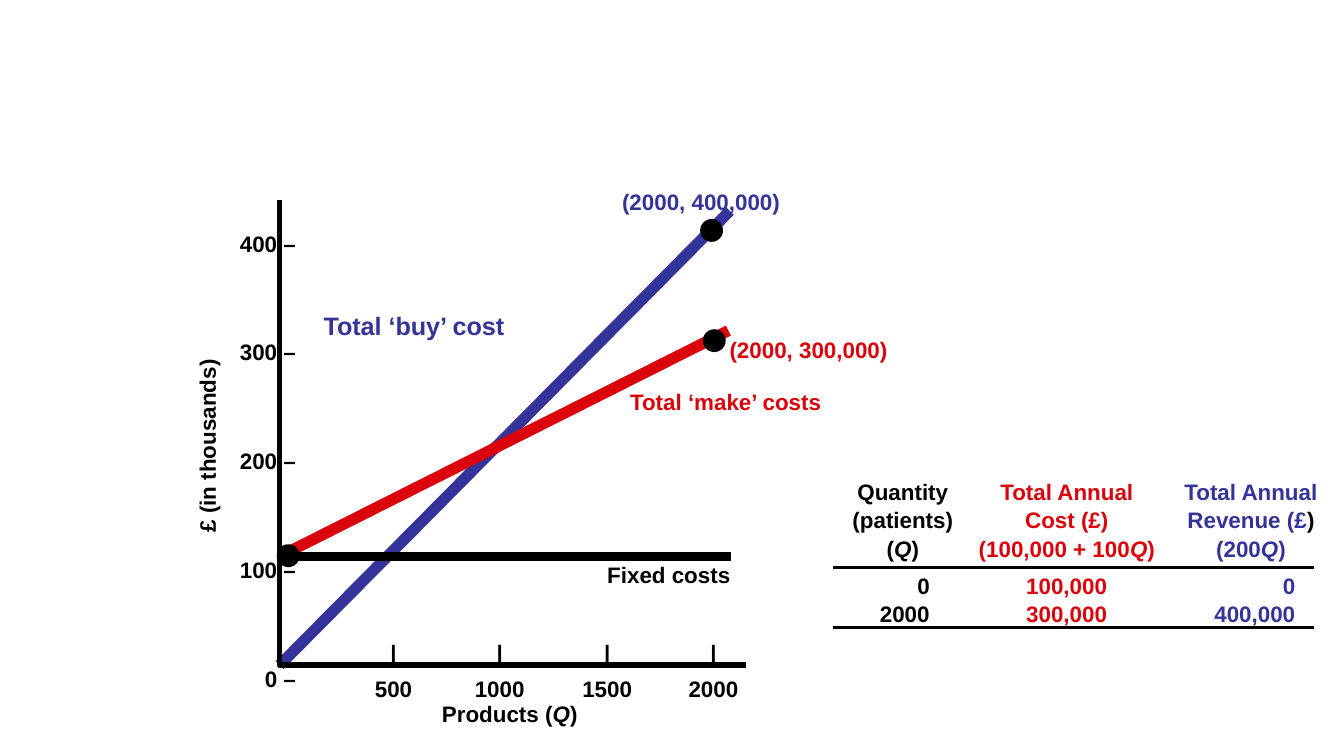
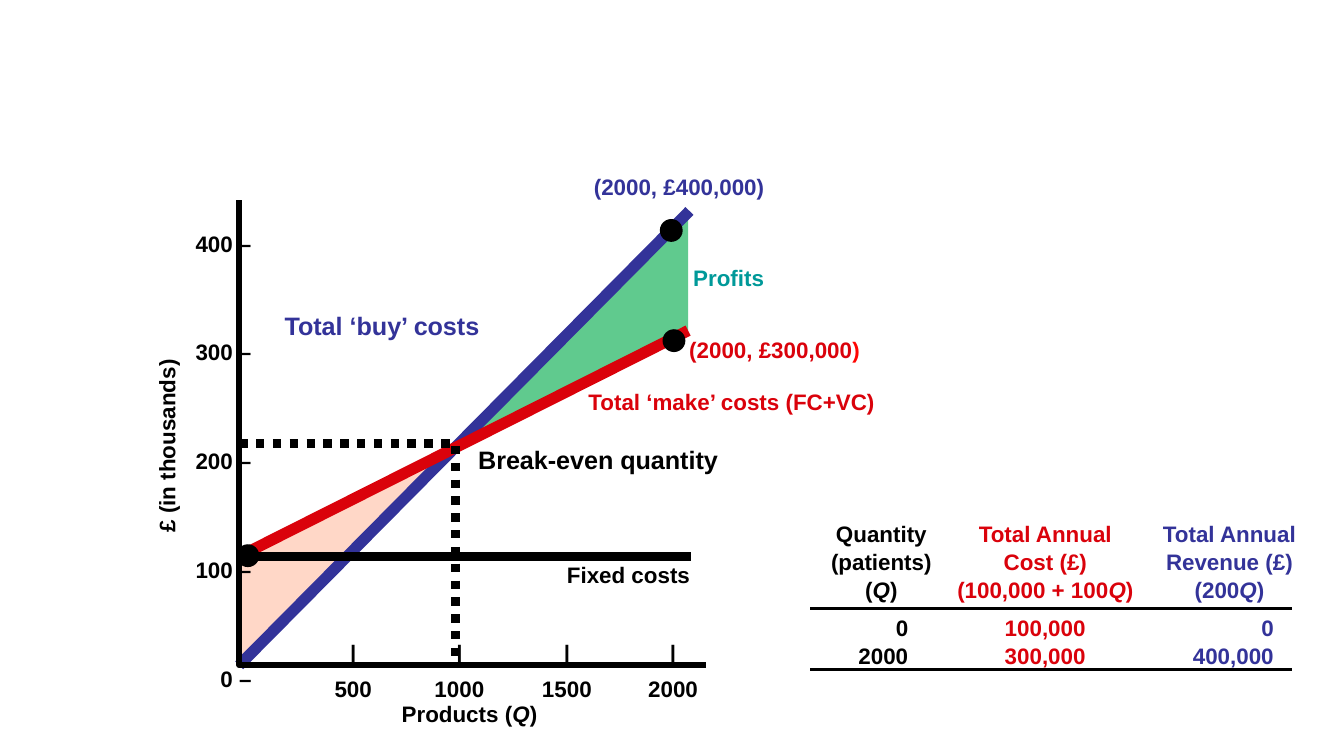
import pptx
import pptx.dml.color
import pptx.enum.dml
import pptx.enum.shapes
import pptx.enum.text
import pptx.oxml
import pptx.oxml.ns
import pptx.util
from pptx.util import Inches

FONT = "Arial"
BLACK, BLUE, RED = "000000", "333399", "DA020B"
PEACH, GREEN, TEAL, BRIGHT_RED = "FFD7C7", "60CA8E", "009999", "FF0502"
LARGE = 13.5
TICK_STOPS = [0.29, 1.08, 1.88, 2.67]
HEAD_STOPS = [0.51, 1.73, 3.1]
VALUE_STOPS = [0.51, 1.83, 3.23]


def paint(fill, color):
    """Set a solid colour, given as a hex string, on a fill."""
    fill.solid()
    fill.fore_color.rgb = pptx.dml.color.RGBColor.from_string(color)


def set_tabs(para, stops, kind):
    """Give a paragraph tab stops of one kind."""
    tabs = "".join(f'<a:tab pos="{Inches(stop)}" algn="{kind}"/>' for stop in stops)
    para._p.get_or_add_pPr().append(pptx.oxml.parse_xml(
        f'<a:tabLst {pptx.oxml.ns.nsdecls("a")}>{tabs}</a:tabLst>'))


def write(para, text, color=BLACK, size=12):
    """Write text, or (text, colour) pieces, with *stars* around italics."""
    pieces = [(text, color)] if isinstance(text, str) else text
    for words, tone in pieces:
        for index, part in enumerate(words.split("*")):
            if part:
                span = para.add_run()
                span.text = part
                span.font.name = FONT
                span.font.size = pptx.util.Pt(size)
                span.font.bold = True
                span.font.italic = index % 2 == 1
                paint(span.font.fill, tone)


def add_text(page, lines, left, top, width, height=0.3, rotation=0, wrap=False,
             spacing=None, gap=0, align=None, stops=(), kind="ctr", **style):
    """Add a text box with one paragraph for each line."""
    box = page.shapes.add_textbox(*map(Inches, (left, top, width, height)))
    box.rotation = rotation
    frame = box.text_frame
    frame.word_wrap = wrap
    frame.auto_size = pptx.enum.text.MSO_AUTO_SIZE.SHAPE_TO_FIT_TEXT
    for index, line in enumerate([lines] if isinstance(lines, str) else lines):
        para = frame.add_paragraph() if index else frame.paragraphs[0]
        para.alignment = align
        para.line_spacing = spacing
        para.space_before = pptx.util.Pt(gap if index else 0)
        if stops:
            set_tabs(para, stops, kind)
        write(para, line, **style)


def add_line(page, start, end, color, weight):
    """Add a straight line without shadow."""
    line = page.shapes.add_connector(
        pptx.enum.shapes.MSO_CONNECTOR.STRAIGHT, *map(Inches, (*start, *end)))
    paint(line.line.fill, color)
    line.line.width = pptx.util.Pt(weight)
    line._element.spPr.append(pptx.oxml.parse_xml(
        f'<a:effectLst {pptx.oxml.ns.nsdecls("a")}/>'))


def add_outline(page, points, fill=None, weight=None, dash=None):
    """Add a filled area, or an open black path when no fill is given."""
    first, *others = [tuple(map(Inches, point)) for point in points]
    builder = page.shapes.build_freeform(*first)
    builder.add_line_segments(others, close=fill is not None)
    shape = builder.convert_to_shape()
    shape.shadow.inherit = False
    if fill:
        paint(shape.fill, fill)
        shape.line.fill.background()
    else:
        shape.fill.background()
        paint(shape.line.fill, BLACK)
        shape.line.width = pptx.util.Pt(weight)
        shape.line.dash_style = dash


def add_dot(page, left, top):
    """Add a black point marker."""
    dot = page.shapes.add_shape(
        pptx.enum.shapes.MSO_SHAPE.OVAL, *map(Inches, (left, top, 0.17, 0.17)))
    dot.shadow.inherit = False
    paint(dot.fill, BLACK)
    dot.line.fill.background()


def in_columns(quantity, cost, revenue, bracket=""):
    """Return the coloured pieces of one tabbed row of figures."""
    return [("\t" + quantity, BLACK), ("\t" + cost, RED), ("\t" + revenue, BLUE),
            (bracket, BLACK)]


def add_figures(page, left, top, rule_left, revenue="Revenue (£)", bracket=""):
    """Add the tabbed figures for quantity, cost and revenue with their rules."""
    head = [
        in_columns("Quantity", "Total Annual", "Total Annual"),
        in_columns("(patients)", "Cost (£)", revenue, bracket),
        in_columns("(*Q*)", "(100,000 + 100*Q*)", "(200*Q*)"),
    ]
    values = [in_columns("0", "100,000", "0"), in_columns("2000", "300,000", "400,000")]
    add_text(page, head, left, top, 3.83, 0.71, spacing=1.05, stops=HEAD_STOPS)
    add_text(page, values, left + 0.2, top + 0.7, 3.47, 0.51, wrap=True,
             spacing=1.05, stops=VALUE_STOPS, kind="r")
    for level in (top + 0.72, top + 1.17):
        add_line(page, (rule_left, level), (rule_left + 3.58, level), BLACK, 1.5)


def add_cost_graph(page, origin, scale_left):
    """Add the cost lines, axes, markers and labels common to both slides."""
    for start, end, color, weight in [
        ((0, 4.95), (3.35, 1.57), BLUE, 6),
        ((0, 4.14), (3.34, 2.46), RED, 6),
        ((0, 4.14), (3.36, 4.14), BLACK, 4.5),
    ]:
        add_line(page, (origin + start[0], start[1]), (origin + end[0], end[1]), color, weight)
    add_outline(page, [(origin, 1.49), (origin, 4.95), (origin + 3.47, 4.95)], weight=3)
    add_text(page, "Products (*Q*)", origin + 1.11, 5.16, 1.22)
    add_text(page, "£ (in thousands)", origin - 1.29, 3.16, 1.5, rotation=270)
    add_text(page, [f"{value} –" for value in range(400, -1, -100)], scale_left, 1.05,
             0.62, 4.02, spacing=4.05, align=pptx.enum.text.PP_ALIGN.RIGHT)
    add_text(page, ["\t|" * 4, "\t500\t1000\t1500\t2000"], origin + 0.46, 4.71,
             3.36, 0.57, wrap=True, gap=4.5, stops=TICK_STOPS)
    add_text(page, "Fixed costs", origin + 2.34, 4.13, 1.13)
    for left, top in [(-0.02, 4.05), (3.15, 2.45), (3.13, 1.63)]:
        add_dot(page, origin + left, top)


def add_costs_slide(deck):
    """Add the slide that compares the two cost lines."""
    page = deck.slides.add_slide(deck.slide_layouts[6])
    add_cost_graph(page, 2.08, 1.68)
    add_text(page, "Total ‘make’ costs", 4.59, 2.84, 1.64, color=RED)
    add_text(page, "(2000, 400,000)", 4.53, 1.35, 1.39, color=BLUE)
    add_text(page, "(2000, 300,000)", 5.33, 2.45, 1.39, color=RED)
    add_figures(page, 6.11, 3.5, 6.2, "Revenue (£", ")")
    add_text(page, "Total ‘buy’ cost", 2.31, 2.26, 1.57, 0.33, color=BLUE, size=LARGE)


def add_break_even_slide(deck):
    """Add the slide that marks the break-even quantity and profits."""
    page = deck.slides.add_slide(deck.slide_layouts[6])
    add_outline(page, [(1.77, 4.13), (3.39, 3.3), (1.77, 4.95)], fill=PEACH)
    add_outline(page, [(5.12, 1.57), (3.39, 3.32), (5.12, 2.46)], fill=GREEN)
    add_cost_graph(page, 1.78, 1.35)
    add_outline(page, [(1.78, 3.3), (3.39, 3.3), (3.39, 4.95)], weight=4.5,
                dash=pptx.enum.dml.MSO_LINE.ROUND_DOT)
    add_text(page, "Total ‘buy’ costs", 2.02, 2.26, 1.67, 0.33, color=BLUE, size=LARGE)
    add_text(page, "Total ‘make’ costs (FC+VC)", 4.28, 2.84, 2.35, color=RED)
    add_text(page, "Break-even quantity", 3.46, 3.26, 2.01, 0.33, size=LARGE)
    add_text(page, "(2000, £400,000)", 4.32, 1.24, 1.48, color=BLUE)
    add_text(page, [[("(2000, £300,000", RED), (")", BRIGHT_RED)]], 5.03, 2.45, 1.48)
    add_text(page, "Profits", 5.06, 1.92, 0.73, color=TEAL)
    add_figures(page, 5.95, 3.81, 6.03)


def main():
    """Build and save the two slides."""
    deck = pptx.Presentation()
    deck.slide_width = Inches(10)
    deck.slide_height = deck.slide_width * 9 // 16
    add_costs_slide(deck)
    add_break_even_slide(deck)
    deck.save("out.pptx")


if __name__ == "__main__":
    main()
